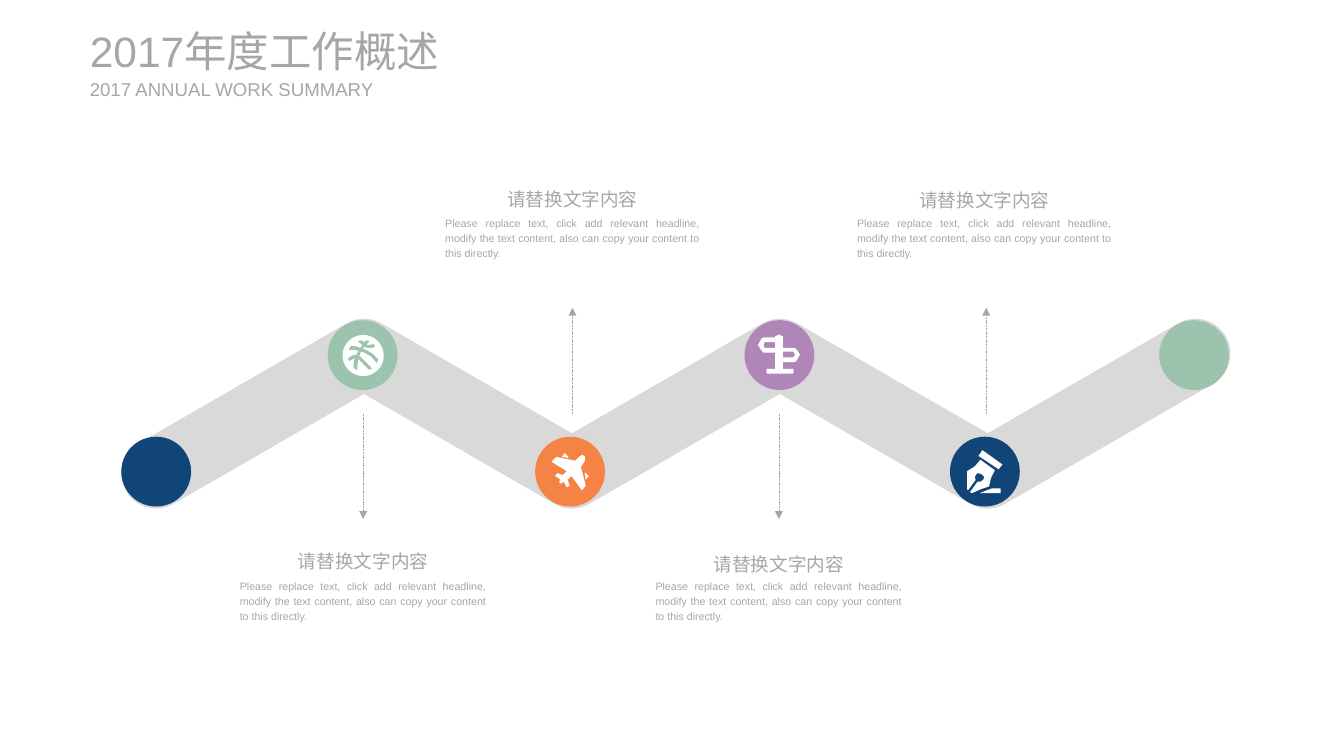
from math import cos, radians, sin

from pptx import Presentation
from pptx.dml.color import RGBColor
from pptx.enum.dml import MSO_LINE
from pptx.enum.shapes import MSO_CONNECTOR, MSO_SHAPE
from pptx.enum.text import MSO_ANCHOR, MSO_AUTO_SIZE, PP_ALIGN
from pptx.oxml.ns import qn
from pptx.util import Pt
from lxml.etree import SubElement

GRAY = RGBColor(0xA6, 0xA6, 0xA6)
ROAD = RGBColor(0xD9, 0xD9, 0xD9)
NAVY = RGBColor(0x11, 0x45, 0x77)
GREEN = RGBColor(0x9C, 0xC3, 0xAE)
ORANGE = RGBColor(0xF5, 0x83, 0x44)
PURPLE = RGBColor(0xB0, 0x86, 0xB8)
WHITE = RGBColor(0xFF, 0xFF, 0xFF)

HEAD = "请替换文字内容"
BODY = ("Please replace text, click add relevant headline, modify the text "
        "content, also can copy your content to this directly.")

# Road joints: alternating low and high, joined by bands at 30 degrees
LEFT, STEP, HIGH, LOW, HALF = 117.7, 156.6, 266.4, 356.8, 26.3
JOINTS = [(LEFT + STEP * i, HIGH if i % 2 else LOW) for i in range(6)]

DOT = 52.6
DOTS = [(117.7, NAVY), (273.2, GREEN), (429.5, ORANGE),
        (587.2, PURPLE), (742, NAVY), (899.6, GREEN)]

# Arrow x, text centre x, heading top, body top, body width, arrow tip y
NOTES = [(273.6, 273.6, 407.5, 431.3, 200, 391),
         (586.8, 586.8, 409.7, 431.3, 200, 391),
         (743, 741.6, 135.4, 157.7, 206, 231.8),
         (431.3, 431.3, 134.6, 157.7, 206, 231.8)]


def arc(x, y, size, start, end, step=6):
    """Points on a circle, angles in degrees, clockwise from the right."""
    return [(x + size * cos(radians(a)), y + size * sin(radians(a)))
            for a in range(start, end + 1, step)]


# Icon outlines, in hundredths of an inch from the icon's corner
BALL = [arc(22, 22, 21.5, 0, 354), [
    (9, 12), (7, 15), (7, 16), (10, 16), (17, 17), (16, 19), (15, 21),
    (10, 22), (6, 25), (7, 28), (13, 25), (12, 30), (12, 35), (15, 37),
    (16, 37), (16, 32), (17, 26), (22, 31), (28, 37), (31, 36), (31, 35),
    (25, 29), (18, 22), (19, 20), (20, 18), (23, 19), (30, 23), (36, 30),
    (37, 29), (38, 26), (32, 20), (25, 16), (22, 15), (23, 13), (26, 14),
    (31, 14), (35, 13), (33, 10), (27, 11), (26, 10), (29, 7), (25, 6),
    (23, 8), (20, 6), (16, 7), (21, 11), (19, 14), (14, 12)]]
PLANE = [[
    (35, 3), (35, 8), (32, 13), (31, 15), (36, 34), (32, 39), (21, 24),
    (17, 28), (19, 34), (16, 36), (13, 30), (10, 32), (8, 30), (10, 28),
    (4, 24), (6, 21), (12, 23), (16, 19), (0, 9), (5, 4), (25, 8),
    (29, 4), (32, 2)],
    [(39, 24), (35, 20), (35, 21), (36, 28)],
    [(14, 0), (11, 4), (17, 5), (18, 4)]]
SIGN = [
    [(18, 8), (7, 8), (6, 11), (7, 14), (18, 14)],
    [(26, 14), (38, 14), (40, 15), (44, 21), (40, 28), (38, 29), (26, 29),
     (26, 36), (37, 36), (37, 41), (9, 41), (9, 36), (18, 36), (18, 19),
     (6, 19), (4, 17), (0, 11), (4, 4), (6, 3), (18, 3), (18, 2), (22, 0),
     (26, 2)],
    [(37, 18), (26, 18), (26, 24), (37, 24), (39, 21)]]
PEN = [[
    (1, 42), (0, 41), (0, 22), (8, 17), (14, 10), (18, 13), (29, 21),
    (25, 29), (23, 38), (14, 41), (5, 45), (3, 44), (11, 33), (14, 33),
    (17, 31), (18, 28), (15, 25), (11, 24), (9, 26), (8, 29), (9, 31)],
    [(13, 45), (35, 45), (35, 40), (26, 40)],
    [(33, 20), (37, 15), (16, 0), (12, 6)]]
ICONS = [(BALL, 257.8, 252), (SIGN, 571, 252),
         (PLANE, 415.4, 341.3), (PEN, 728.6, 339.1)]


def paint(shape, color):
    shape.shadow.inherit = False
    shape.fill.solid()
    shape.fill.fore_color.rgb = color
    shape.line.fill.background()


def outline(shapes, loops, color, left=0, top=0, unit=1):
    """Closed loops in one shape; a loop inside another is a hole."""
    loops = [[((left + x * unit) * 100, (top + y * unit) * 100)
              for x, y in loop] for loop in loops]
    pen = shapes.build_freeform(*loops[0][0], scale=Pt(0.01))
    pen.add_line_segments(loops[0][1:])
    for loop in loops[1:]:
        pen.move_to(*loop[0])
        pen.add_line_segments(loop[1:])
    paint(pen.convert_to_shape(), color)


def road(shapes):
    """Band with round ends and round outer bends."""
    inner = HALF / cos(radians(30))
    first, *bends, last = JOINTS
    edge = arc(*first, HALF, 60, 240)
    for x, y in bends:
        edge += arc(x, y, HALF, 240, 300) if y == HIGH else [(x, y - inner)]
    edge += arc(*last, HALF, 240, 420)
    for x, y in reversed(bends):
        edge += arc(x, y, HALF, 60, 120) if y == LOW else [(x, y + inner)]
    outline(shapes, [edge], ROAD)


def dot(shapes, x, y, color):
    shape = shapes.add_shape(MSO_SHAPE.ROUNDED_RECTANGLE, Pt(x - DOT / 2),
                             Pt(y - DOT / 2), Pt(DOT), Pt(DOT))
    shape.adjustments[0] = 0.5
    paint(shape, color)


def arrow(shapes, x, start, end):
    line = shapes.add_connector(MSO_CONNECTOR.STRAIGHT,
                                Pt(x), Pt(start), Pt(x), Pt(end))
    line.line.color.rgb = GRAY
    line.line.width = Pt(0.5)
    line.line.dash_style = MSO_LINE.SQUARE_DOT
    props = line._element.spPr
    SubElement(props.find(qn("a:ln")), qn("a:tailEnd"), type="triangle")
    SubElement(props, qn("a:effectLst"))


def text(shape, words, size, box, align=PP_ALIGN.LEFT, space=1.0,
         wrap=True, inset=None, anchor=MSO_ANCHOR.TOP):
    shape.left, shape.top, shape.width, shape.height = map(Pt, box)
    frame = shape.text_frame
    frame.word_wrap = wrap
    frame.auto_size = MSO_AUTO_SIZE.SHAPE_TO_FIT_TEXT
    frame.vertical_anchor = anchor
    if inset is not None:
        frame.margin_left = frame.margin_right = Pt(inset)
        frame.margin_top = frame.margin_bottom = Pt(inset)
    para = frame.paragraphs[0]
    para.alignment = align
    para.line_spacing = space
    para.space_before = Pt(0)
    run = para.add_run()
    run.text = words
    run.font.size = Pt(size)
    run.font.name = "Arial"
    run.font.color.rgb = GRAY


def label(shapes, words, size, box, **form):
    text(shapes.add_textbox(*map(Pt, box)), words, size, box, **form)


def note(shapes, mid, head, body, width):
    label(shapes, HEAD, 14, (mid - 56.9, head, 113.8, 25.9),
          align=PP_ALIGN.CENTER, space=1.2, wrap=False)
    label(shapes, BODY, 8, (mid - width / 2, body, width, 41),
          align=PP_ALIGN.JUSTIFY, space=1.2)


def main():
    deck = Presentation()
    deck.slide_width, deck.slide_height = Pt(1012.5), Pt(569.5)
    slide = deck.slides.add_slide(deck.slide_layouts[5])
    shapes = slide.shapes

    text(shapes.title, "2017年度工作概述", 32, (67.7, 18.7, 311, 38.9),
         inset=0, anchor=MSO_ANCHOR.MIDDLE)
    label(shapes, "2017 ANNUAL WORK SUMMARY", 14, (67.7, 58.3, 221, 17.3),
          inset=0, anchor=MSO_ANCHOR.MIDDLE)

    path = shapes.add_group_shape().shapes
    road(path)
    for i, (x, color) in enumerate(DOTS):
        dot(path, x, 267.5 if i % 2 else 355.3, color)
    for loops, left, top in ICONS:
        outline(path, loops, WHITE, left, top, 0.72)

    for x, mid, head, body, width, tip in NOTES:
        arrow(shapes, x, 311.8, tip)
        note(shapes.add_group_shape().shapes, mid, head, body, width)
    deck.save("out.pptx")


if __name__ == "__main__":
    main()
